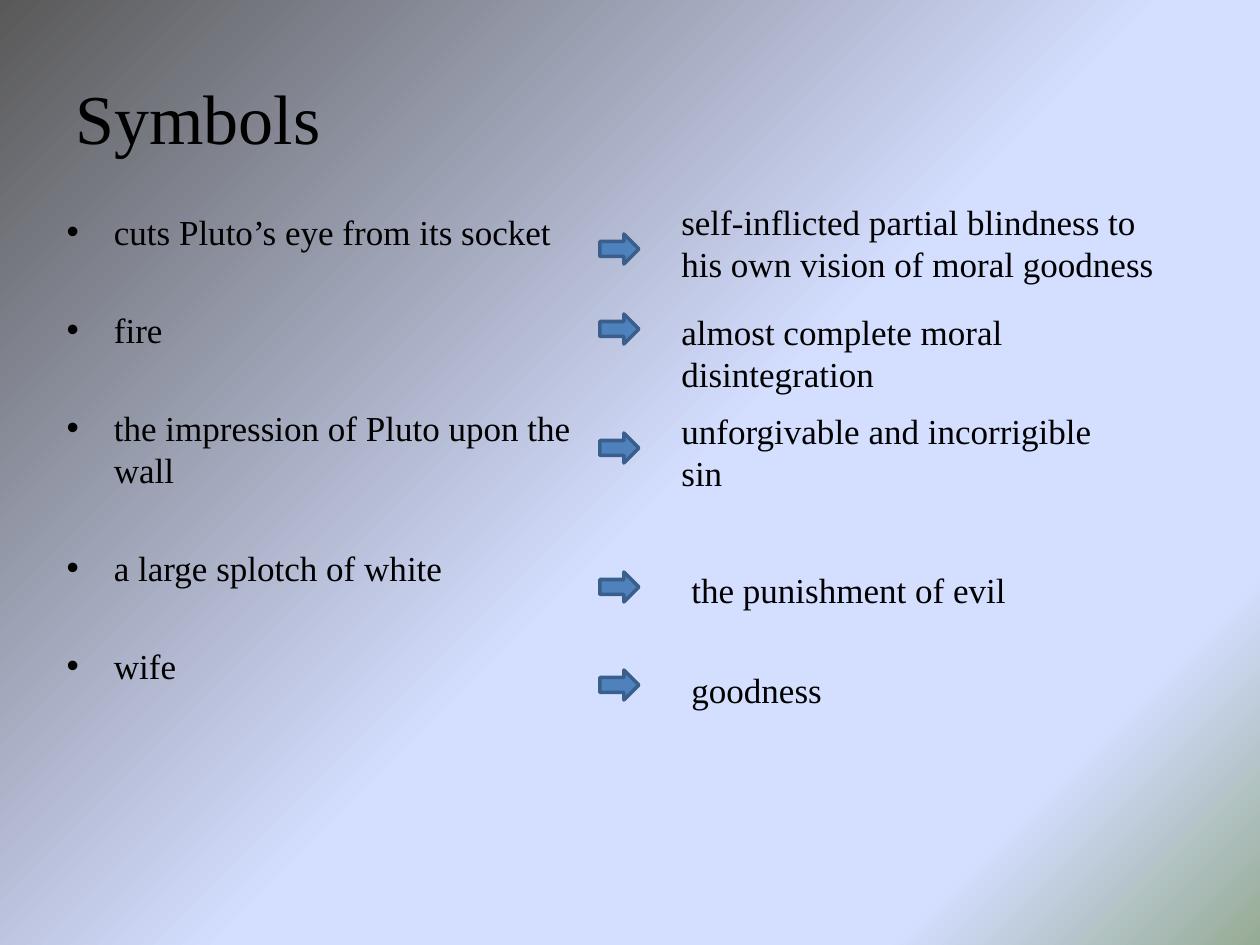
"""Build the Symbols slide, pairing each symbol with its meaning."""
import copy

import pptx
import pptx.dml.color
import pptx.enum.shapes
import pptx.enum.text
import pptx.oxml.ns
import pptx.util

RGB = pptx.dml.color.RGBColor
BLACK = RGB(0x00, 0x00, 0x00)
ARROW_FILL = RGB(0x4F, 0x81, 0xBD)
ARROW_LINE = RGB(0x3A, 0x5F, 0x8C)
GRADIENT = [
    (0, RGB(0x59, 0x59, 0x59)),
    (0.53, RGB(0xD4, 0xDE, 0xFF)),
    (0.83, RGB(0xD4, 0xDE, 0xFF)),
    (1, RGB(0x96, 0xAB, 0x94)),
]
FONT = "Times New Roman"
PX = 914400 // 126

TITLE = "Symbols"
TITLE_BOX = (63, 38, 1134, 157)
BODY_BOX = (54, 204, 557, 624)
ARROW_LEFT, ARROW_W, ARROW_H = 600, 39, 30

# symbol, arrow top, meaning, meaning box
PAIRS = [
    ("cuts Pluto’s eye from its socket", 234,
     "self-inflicted partial blindness to his own vision of moral goodness",
     (669, 194, 517, 140)),
    ("fire", 314, "almost complete moral disintegration", (669, 304, 507, 97)),
    ("the impression of Pluto upon the wall", 433,
     "unforgivable and incorrigible sin", (669, 403, 437, 97)),
    ("a large splotch of white", 572, "the punishment of evil", (679, 562, 407, 55)),
    ("wife", 670, "goodness", (679, 662, 417, 55)),
]


def emu(box):
    return [v * PX for v in box]


def place(sp, box):
    sp.left, sp.top, sp.width, sp.height = emu(box)


def write(sp, text, size):
    tf = sp.text_frame
    tf.text = text
    tf.word_wrap = True
    for p in tf.paragraphs:
        p.alignment = pptx.enum.text.PP_ALIGN.LEFT
        for r in p.runs:
            r.font.name = FONT
            r.font.size = pptx.util.Pt(size)
            r.font.color.rgb = BLACK
    return tf


def paint_background(s):
    fill = s.background.fill
    fill.gradient()
    fill.gradient_angle = 315
    stops = s.element.find(".//" + pptx.oxml.ns.qn("a:gsLst"))
    while len(stops) < len(GRADIENT):
        stops.append(copy.deepcopy(stops[0]))
    for stop, (position, color) in zip(fill.gradient_stops, GRADIENT):
        stop.position = position
        stop.color.rgb = color


def add_arrow(s, top):
    sp = s.shapes.add_shape(pptx.enum.shapes.MSO_SHAPE.RIGHT_ARROW,
                            *emu((ARROW_LEFT, top, ARROW_W, ARROW_H)))
    sp.shadow.inherit = False
    sp.fill.solid()
    sp.fill.fore_color.rgb = ARROW_FILL
    sp.line.color.rgb = ARROW_LINE
    sp.line.width = pptx.util.Pt(2)


def main():
    prs = pptx.Presentation()
    prs.slide_width, prs.slide_height = emu((1260, 945))
    s = prs.slides.add_slide(prs.slide_layouts[1])
    paint_background(s)

    title, body = s.placeholders
    place(title, TITLE_BOX)
    tf = write(title, TITLE, 40)
    tf.vertical_anchor = pptx.enum.text.MSO_ANCHOR.MIDDLE

    place(body, BODY_BOX)
    tf = write(body, "\n".join(pair[0] for pair in PAIRS), 20)
    tf.auto_size = pptx.enum.text.MSO_AUTO_SIZE.NONE
    for i, p in enumerate(tf.paragraphs):
        p.space_before = pptx.util.Pt(32 if i else 0)

    for _, arrow_top, meaning, box in PAIRS:
        add_arrow(s, arrow_top)
        tf = write(s.shapes.add_textbox(*emu(box)), meaning, 20)
        tf.auto_size = pptx.enum.text.MSO_AUTO_SIZE.SHAPE_TO_FIT_TEXT

    prs.save("out.pptx")


if __name__ == "__main__":
    main()
